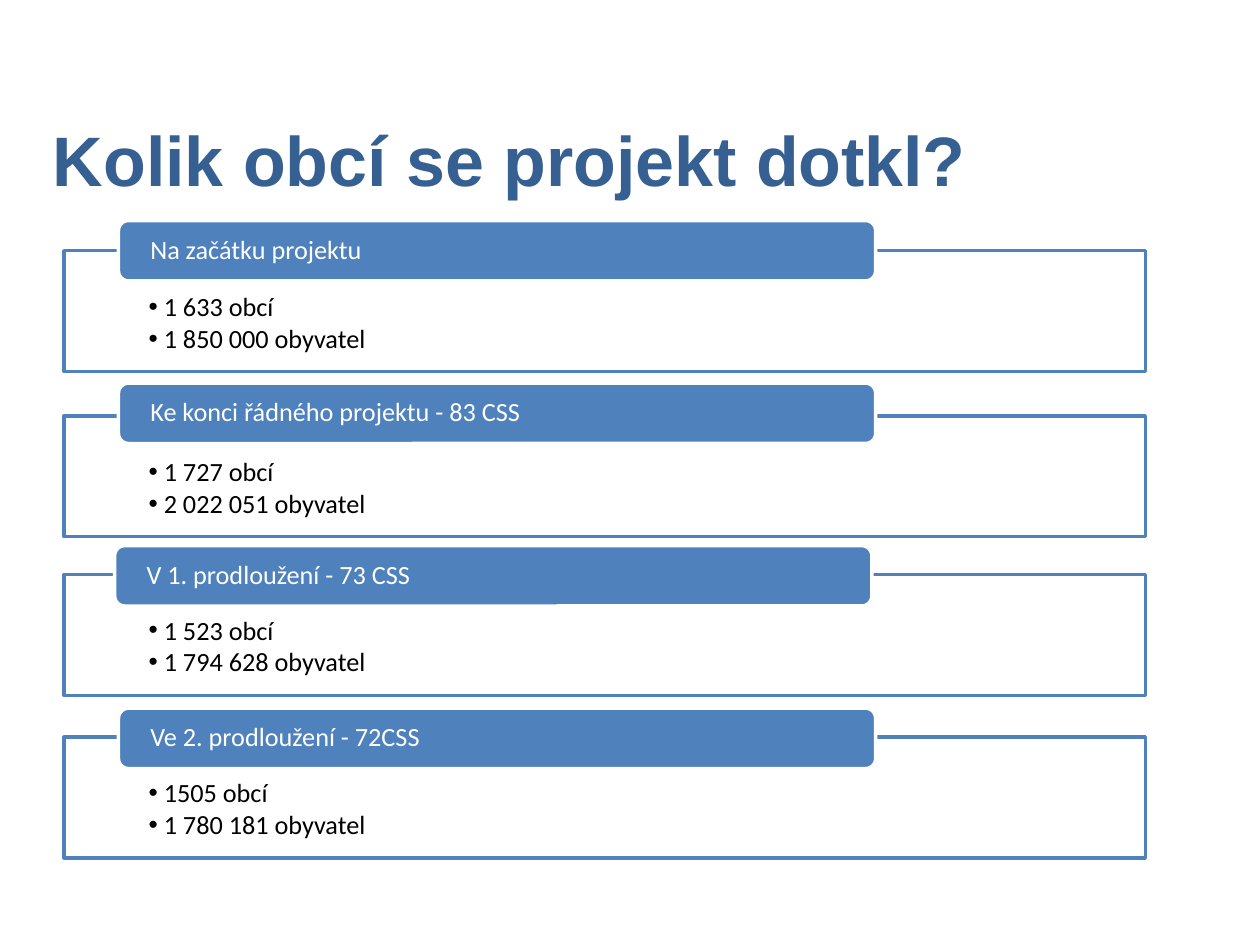
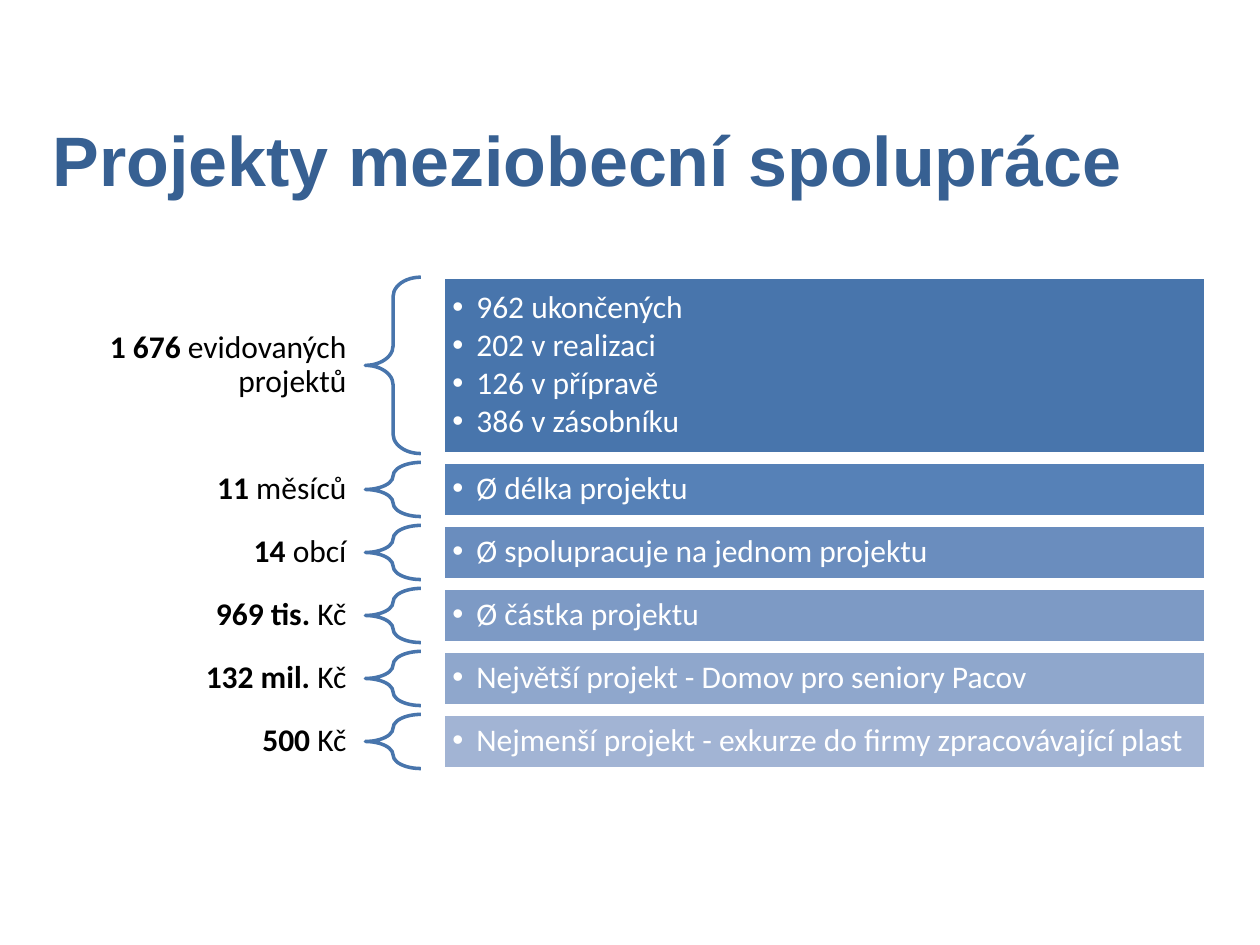
import pptx
import pptx.dml.color
import pptx.enum.shapes
import pptx.enum.text
import pptx.oxml.ns
import pptx.util
from lxml import etree

Inches = pptx.util.Inches
Pt = pptx.util.Pt
SHAPES = pptx.enum.shapes.MSO_SHAPE
ALIGN = pptx.enum.text.PP_ALIGN
ANCHOR = pptx.enum.text.MSO_ANCHOR
qn = pptx.oxml.ns.qn

TITLE_BLUE = "376092"
BLUE = "4F81BD"
BRACE_BLUE = "4875AC"
WHITE = "FFFFFF"
BLACK = "000000"

TITLE = {"size": 40, "font": "Arial", "color": TITLE_BLUE}
HEADING = {"size": 15, "color": WHITE, "line": 0.9, "insets": (0.23, 0, 0.23, 0)}
COUNTS = {"size": 15, "color": BLACK, "line": 0.9, "bullet": 0.12, "after": 2,
          "anchor": ANCHOR.TOP, "insets": (0.67, 0.34, 0.67, 0.12)}
LABEL = {"size": 18, "color": BLACK, "line": 0.9, "align": ALIGN.RIGHT,
         "insets": (0.14, 0.05, 0.14, 0.05)}
DETAIL = {"size": 18, "color": WHITE, "line": 0.9, "bullet": 0.19, "after": 2.4,
          "insets": (0.07, 0.07, 0.07, 0.07)}


def write(shape, paragraphs, style):
    """Fill a shape with paragraphs, each a list of (text, bold) runs."""
    frame = shape.text_frame
    left, top, right, bottom = style.get("insets", (0.1, 0.05, 0.1, 0.05))
    frame_format = {
        "word_wrap": True,
        "auto_size": pptx.enum.text.MSO_AUTO_SIZE.NONE,
        "vertical_anchor": style.get("anchor", ANCHOR.MIDDLE),
        "margin_left": Inches(left), "margin_top": Inches(top),
        "margin_right": Inches(right), "margin_bottom": Inches(bottom),
    }
    for name, value in frame_format.items():
        setattr(frame, name, value)
    for index, runs in enumerate(paragraphs):
        paragraph = frame.add_paragraph() if index else frame.paragraphs[0]
        paragraph.alignment = style.get("align", ALIGN.LEFT)
        paragraph.line_spacing = style.get("line", 1.0)
        paragraph.space_after = Pt(style.get("after", 0))
        if "bullet" in style:
            properties = paragraph._p.get_or_add_pPr()
            indent = Inches(style["bullet"])
            properties.set("marL", str(indent))
            properties.set("indent", str(-indent))
            etree.SubElement(properties, qn("a:buFont"), typeface="Arial")
            etree.SubElement(properties, qn("a:buChar"), char="•")
        for text, bold in runs:
            run = paragraph.add_run()
            run.text = text
            font_format = {"name": style.get("font", "Calibri"),
                           "size": Pt(style["size"]), "bold": bold}
            for name, value in font_format.items():
                setattr(run.font, name, value)
            run.font.color.rgb = pptx.dml.color.RGBColor.from_string(style["color"])


def add_box(slide, kind, place, fill, line):
    box = slide.shapes.add_shape(kind, *map(Inches, place))
    box.shadow.inherit = False
    if fill:
        box.fill.solid()
        box.fill.fore_color.rgb = pptx.dml.color.RGBColor.from_string(fill)
    else:
        box.fill.background()
    box.line.color.rgb = pptx.dml.color.RGBColor.from_string(line)
    box.line.width = Pt(2)
    return box


presentation = pptx.Presentation()
presentation.slide_width = Inches(10)
presentation.slide_height = Inches(7.5)

slides = []
for title, width in [("Kolik obcí se projekt dotkl?", 8.28),
                     ("Projekty meziobecní spolupráce", 9.24)]:
    slide = presentation.slides.add_slide(presentation.slide_layouts[5])
    heading = slide.shapes.title
    heading.left, heading.top = Inches(0.32), Inches(0.9)
    heading.width, heading.height = Inches(width), Inches(0.71)
    write(heading, [[(title, True)]], TITLE)
    slides.append(slide)
municipalities_slide, projects_slide = slides

# Municipalities and inhabitants in each project stage
stages = [
    ("Na začátku projektu", 0.94, 1.99, ["1 633 obcí", "1 850 000 obyvatel"]),
    ("Ke konci řádného projektu - 83 CSS", 0.94, 3.3, ["1 727 obcí", "2 022 051 obyvatel"]),
    ("V 1. prodloužení - 73 CSS", 0.91, 4.56, ["1 523 obcí", "1 794 628 obyvatel"]),
    ("Ve 2. prodloužení - 72CSS", 0.94, 5.85, ["1505 obcí", "1 780 181 obyvatel"]),
]
for index, (stage, tab_left, frame_top, counts) in enumerate(stages):
    count_box = add_box(municipalities_slide, SHAPES.RECTANGLE,
                        (0.51, frame_top, 8.58, 0.96), WHITE, BLUE)
    fill_color = count_box.fill._xPr.find(qn("a:solidFill"))[0]
    etree.SubElement(fill_color, qn("a:alpha"), val="90000")
    write(count_box, [[(count, False)] for count in counts], COUNTS)
    stage_tab = add_box(municipalities_slide, SHAPES.ROUNDED_RECTANGLE,
                        (tab_left, 1.75 + index * 1.29, 6.01, 0.48), BLUE, WHITE)
    write(stage_tab, [[(stage, False)]], HEADING)

# Key project figures, each braced to its explanation
figures = [
    ("1 676 ", "evidovaných projektů", BRACE_BLUE, 1.4,
     ["962 ukončených", "202 v realizaci", "126 v přípravě", "386 v zásobníku"]),
    ("11", " měsíců", "5681B7", 0.43, ["Ø délka projektu"]),
    ("14", " obcí", "6A8DBE", 0.43, ["Ø spolupracuje na jednom projektu"]),
    ("969 tis. ", "Kč", "7D9AC5", 0.43, ["Ø částka projektu"]),
    ("132 mil. ", "Kč", "8FA7CC", 0.43, ["Největší projekt - Domov pro seniory Pacov"]),
    ("500", " Kč", "A2B4D4", 0.43,
     ["Nejmenší projekt - exkurze do firmy zpracovávající plast"]),
]
row_top = 2.2
for amount, unit, color, height, details in figures:
    label = projects_slide.shapes.add_textbox(
        Inches(0.67), Inches(row_top), Inches(2.22), Inches(height))
    write(label, [[(amount, True), (unit, False)]], LABEL)
    brace = add_box(projects_slide, SHAPES.LEFT_BRACE,
                    (2.9, row_top, 0.44, height), None, BRACE_BLUE)
    brace.adjustments[0] = 0.35
    detail_box = add_box(projects_slide, SHAPES.RECTANGLE,
                         (3.52, row_top, 6.05, height), color, WHITE)
    write(detail_box, [[(detail, False)] for detail in details], DETAIL)
    row_top += height + 0.07

presentation.save("out.pptx")
